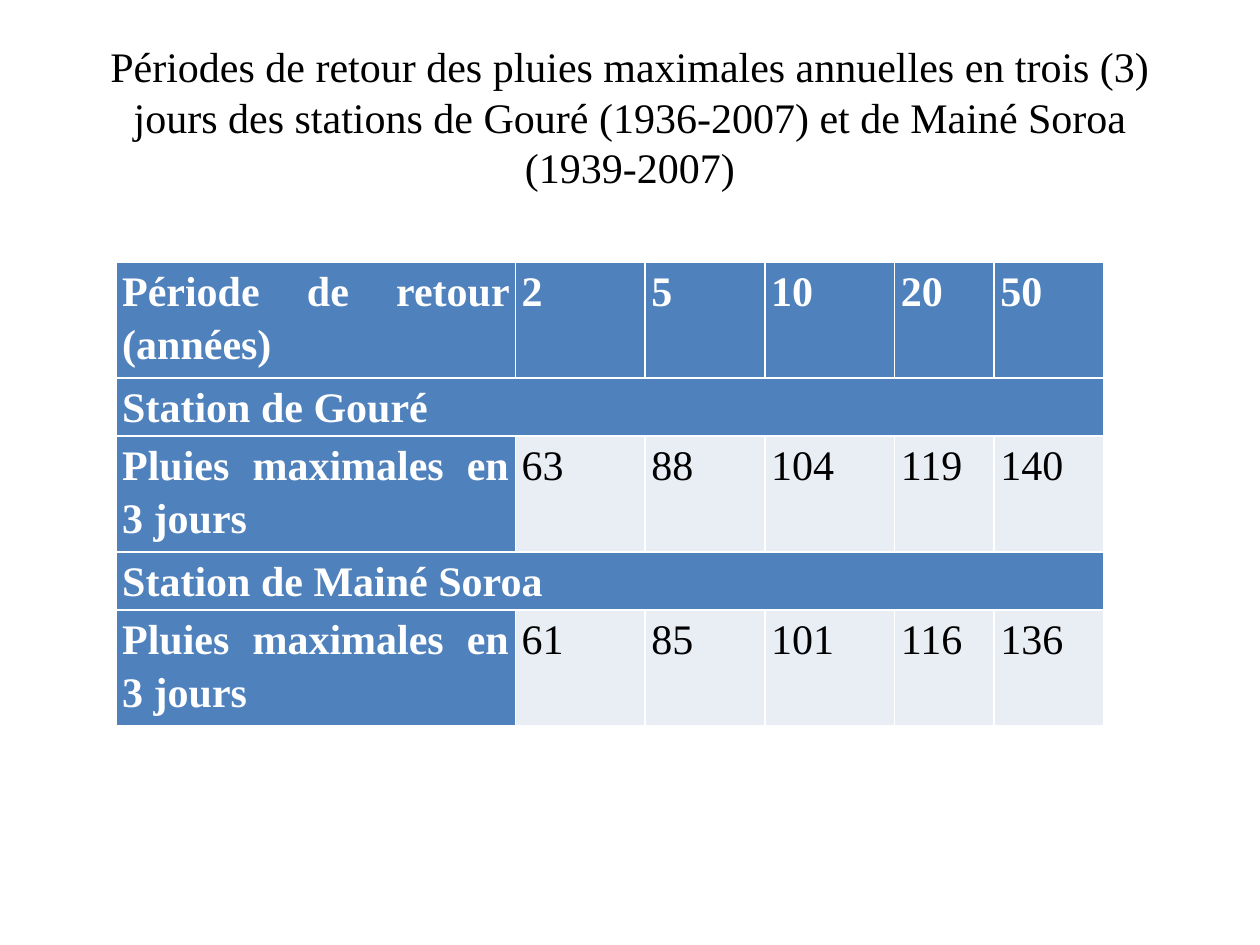
from pptx import Presentation
from pptx import util as u
from pptx.dml.color import RGBColor
from pptx.enum import text

BLACK = RGBColor(0x00, 0x00, 0x00)
WHITE = RGBColor(0xFF, 0xFF, 0xFF)
BLUE = RGBColor(0x4F, 0x81, 0xBD)
PALE = RGBColor(0xE9, 0xED, 0xF4)

TITLE = ("Périodes de retour des pluies maximales annuelles en trois (3) jours "
         "des stations de Gouré (1936-2007) et de Mainé Soroa (1939-2007)")
RAIN_LABEL = "Pluies maximales en 3 jours"
ROWS = [
    ["Période de retour (années)", "2", "5", "10", "20", "50"],
    ["Station de Gouré"],
    [RAIN_LABEL, "63", "88", "104", "119", "140"],
    ["Station de Mainé Soroa"],
    [RAIN_LABEL, "61", "85", "101", "116", "136"],
]
COLUMN_WIDTHS = [3.17, 1.03, 0.95, 1.03, 0.79, 0.87]
LINE_HEIGHT = 0.42


class SlideBuilder:
    font_name = "Times New Roman"
    font_size = u.Pt(24)

    def __init__(self, slide):
        self.slide = slide

    def format_paragraph(self, paragraph, color, alignment, bold=False):
        paragraph.alignment = alignment
        for run in paragraph.runs:
            run.font.name = self.font_name
            run.font.size = self.font_size
            run.font.bold = bold
            run.font.color.rgb = color

    def title(self, wording, left, top, width, height):
        shape = self.slide.shapes.add_textbox(
            u.Inches(left), u.Inches(top), u.Inches(width), u.Inches(height))
        frame = shape.text_frame
        frame.word_wrap = True
        frame.vertical_anchor = text.MSO_ANCHOR.MIDDLE
        frame.text = wording
        self.format_paragraph(frame.paragraphs[0], BLACK, text.PP_ALIGN.CENTER)

    def cell(self, cell, wording, heading, alignment):
        cell.margin_left = cell.margin_right = u.Inches(0.05)
        cell.margin_top = cell.margin_bottom = 0
        cell.fill.solid()
        cell.fill.fore_color.rgb = BLUE if heading else PALE
        cell.text_frame.text = wording
        paragraph = cell.text_frame.paragraphs[0]
        paragraph.line_spacing = 1.15
        self.format_paragraph(paragraph, WHITE if heading else BLACK, alignment, heading)

    def table(self, rows, widths, left, top):
        heights = [LINE_HEIGHT if len(row) == 1 else 2 * LINE_HEIGHT for row in rows]
        table = self.slide.shapes.add_table(
            len(rows), len(widths), u.Inches(left), u.Inches(top),
            u.Inches(sum(widths)), u.Inches(sum(heights))).table
        table.first_col = True
        table.horz_banding = False
        for column, width in zip(table.columns, widths):
            column.width = u.Inches(width)
        for row_index, (values, height) in enumerate(zip(rows, heights)):
            table.rows[row_index].height = u.Inches(height)
            alignment = text.PP_ALIGN.JUSTIFY
            if len(values) == 1:
                alignment = text.PP_ALIGN.LEFT
                table.cell(row_index, 0).merge(table.cell(row_index, len(widths) - 1))
            for column_index, wording in enumerate(values):
                heading = row_index == 0 or column_index == 0
                self.cell(table.cell(row_index, column_index), wording, heading, alignment)


def main():
    presentation = Presentation()
    presentation.slide_width = u.Inches(10)
    presentation.slide_height = u.Inches(7.5)
    builder = SlideBuilder(presentation.slides.add_slide(presentation.slide_layouts[6]))
    builder.title(TITLE, 0.5, 0.3, 9, 1.25)
    builder.table(ROWS, COLUMN_WIDTHS, 0.92, 2.08)
    presentation.save("out.pptx")


if __name__ == "__main__":
    main()
